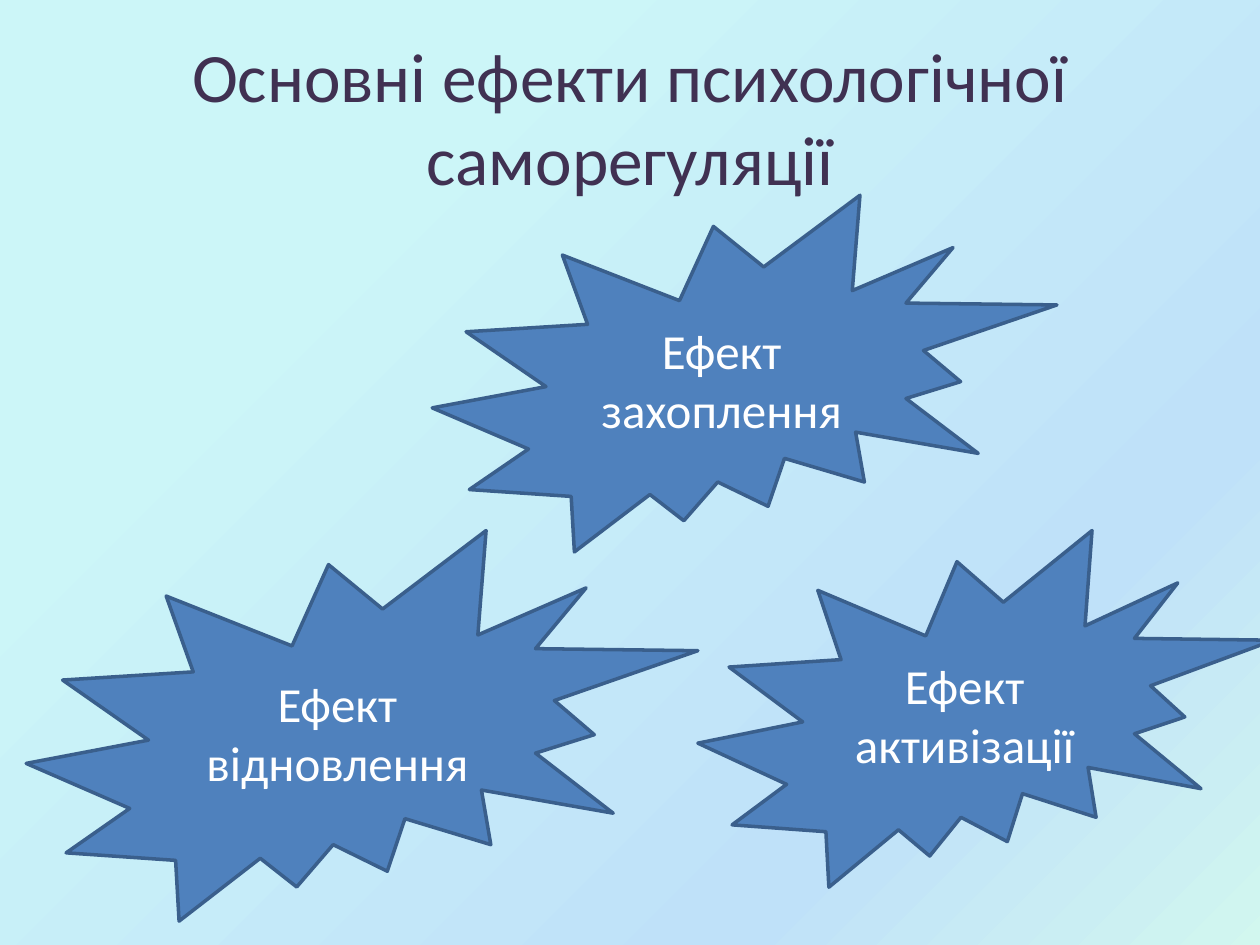
from copy import deepcopy

from pptx import Presentation
from pptx.dml.color import RGBColor
from pptx.enum.shapes import MSO_SHAPE
from pptx.enum.text import MSO_ANCHOR, MSO_AUTO_SIZE, PP_ALIGN
from pptx.oxml.ns import qn
from pptx.util import Pt

RECTANGLE, BURST = MSO_SHAPE.RECTANGLE, MSO_SHAPE.EXPLOSION2
MIDDLE, CENTER = MSO_ANCHOR.MIDDLE, PP_ALIGN.CENTER
NO_AUTOFIT = MSO_AUTO_SIZE.NONE
TITLE_ONLY = 5

COLORS = {
    "title": "403152",
    "burst": "4F81BD",
    "burst_line": "3A5F8C",
    "burst_text": "FFFFFF",
}
BACKDROP_STOPS = [(0.25, "CCF6F8"), (0.75, "BFE1F9"), (1.0, "D2F7EF")]

PAGE_WIDTH, PAGE_HEIGHT = 720, 540
TITLE_BOX = (36, 21.6, 648, 90)
EFFECTS = [
    ("Ефект активізації", (398.8, 303.2, 329, 203.8)),
    ("Ефект відновлення", (15, 303.2, 383.8, 223.2)),
    ("Ефект захоплення", (247, 111.6, 357, 203.8)),
]


def rgb(value):
    return RGBColor.from_string(value)


def write_centered(shape, text, size, color):
    frame = shape.text_frame
    frame.word_wrap = True
    frame.auto_size = NO_AUTOFIT
    frame.vertical_anchor = MIDDLE
    para = frame.paragraphs[0]
    para.alignment = CENTER
    span = para.add_run()
    span.text = text
    for name, value in {"name": "Calibri", "size": Pt(size)}.items():
        setattr(span.font, name, value)
    span.font.color.rgb = rgb(color)


def add_backdrop(page, box):
    """Fill the box with a diagonal gradient behind everything else."""
    backdrop = page.shapes.add_shape(RECTANGLE, *map(Pt, box))
    backdrop.shadow.inherit = False
    backdrop.line.fill.background()
    fill = backdrop.fill
    fill.gradient()
    fill.gradient_angle = 315
    stop_list = backdrop._element.spPr.find(".//" + qn("a:gsLst"))
    stop_list.append(deepcopy(stop_list[-1]))
    for stop, (position, color) in zip(fill.gradient_stops, BACKDROP_STOPS):
        stop.position = position
        stop.color.rgb = rgb(color)
    page.shapes._spTree.insert(2, backdrop._element)


def add_title(page, box, text):
    title = page.shapes.title
    title.left, title.top, title.width, title.height = map(Pt, box)
    write_centered(title, text, 39.6, COLORS["title"])


def add_effect(page, box, text):
    burst = page.shapes.add_shape(BURST, *map(Pt, box))
    burst.shadow.inherit = False
    burst.fill.solid()
    burst.fill.fore_color.rgb = rgb(COLORS["burst"])
    burst.line.color.rgb = rgb(COLORS["burst_line"])
    burst.line.width = Pt(2)
    write_centered(burst, text, 28, COLORS["burst_text"])


def main():
    deck = Presentation()
    deck.slide_width, deck.slide_height = Pt(PAGE_WIDTH), Pt(PAGE_HEIGHT)
    page = deck.slides.add_slide(deck.slide_layouts[TITLE_ONLY])
    add_backdrop(page, (0, 0, PAGE_WIDTH, 552))
    add_title(page, TITLE_BOX, "Основні ефекти психологічної саморегуляції")
    for text, box in EFFECTS:
        add_effect(page, box, text)
    deck.save("out.pptx")


if __name__ == "__main__":
    main()
